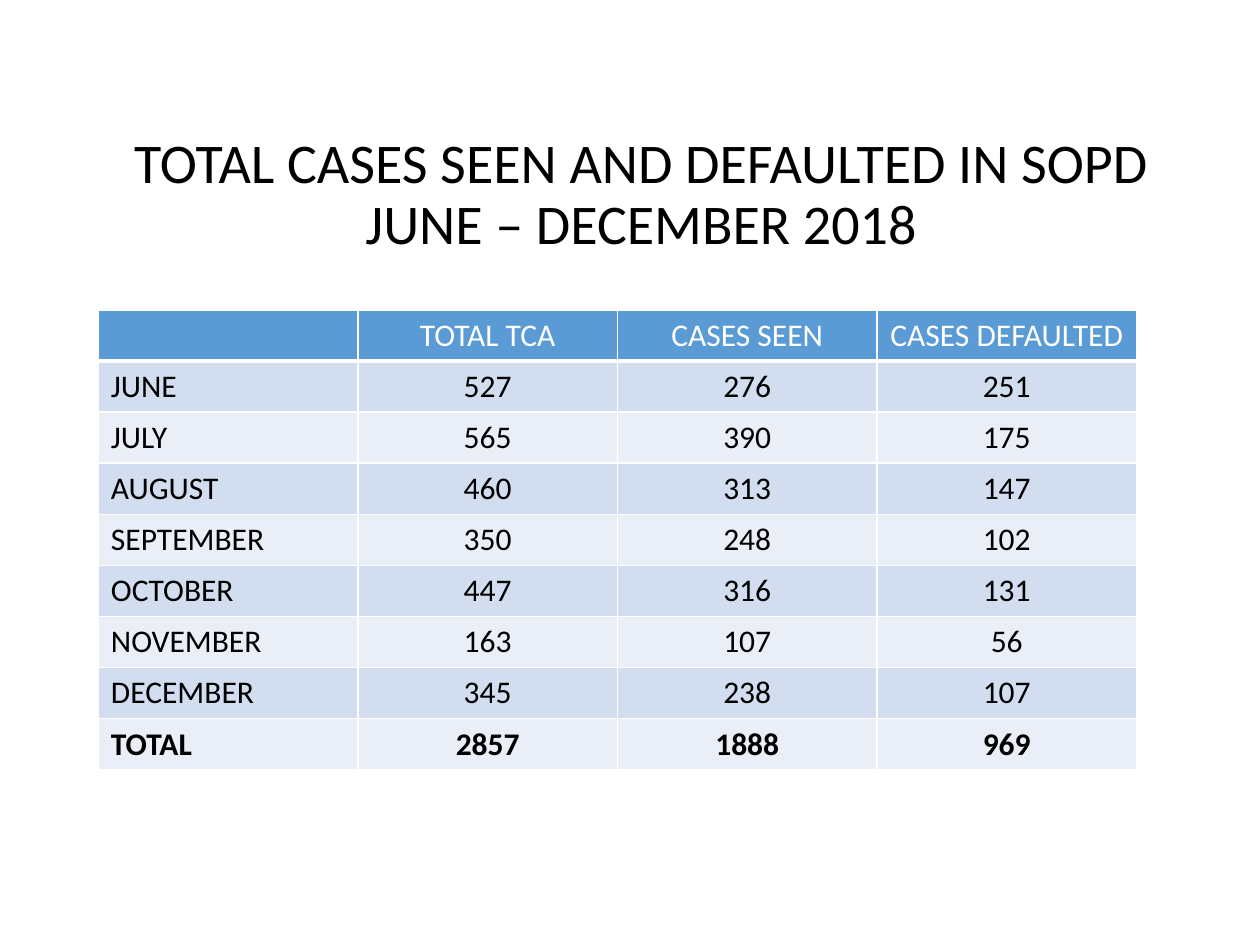
from dataclasses import dataclass

from lxml import etree
from pptx import Presentation
from pptx.dml.color import RGBColor
from pptx.enum.text import MSO_ANCHOR, PP_ALIGN
from pptx.oxml.ns import qn
from pptx.util import Pt

CENTER, LEFT = PP_ALIGN.CENTER, PP_ALIGN.LEFT
MIDDLE = MSO_ANCHOR.MIDDLE
TITLE_ONLY = 5


@dataclass(frozen=True)
class Theme:
    font: str = "Calibri"
    title_size: float = 32
    table_size: float = 18
    text: str = "000000"
    header_text: str = "FFFFFF"
    header_fill: str = "5B9BD5"
    band_fills: tuple[str, str] = ("D2DEEF", "EAEFF7")
    border: str = "FFFFFF"
    thin_border: float = 1
    header_border: float = 3


@dataclass(frozen=True)
class Box:
    left: float
    top: float
    width: float
    height: float


@dataclass(frozen=True)
class CaseRow:
    label: str
    total: int
    seen: int
    defaulted: int
    bold: bool = False

    def texts(self) -> list[str]:
        return [self.label, str(self.total), str(self.seen), str(self.defaulted)]


THEME = Theme()
TITLE = "TOTAL CASES SEEN AND DEFAULTED IN SOPD JUNE – DECEMBER 2018"
TITLE_BOX = Box(56.2, 59.8, 620.6, 104.4)
TABLE_BOX = Box(56.2, 177.1, 593.28, 262.8)
HEADERS = ["", "TOTAL TCA", "CASES SEEN", "CASES DEFAULTED"]
CASE_ROWS = [
    CaseRow("JUNE", 527, 276, 251),
    CaseRow("JULY", 565, 390, 175),
    CaseRow("AUGUST", 460, 313, 147),
    CaseRow("SEPTEMBER", 350, 248, 102),
    CaseRow("OCTOBER", 447, 316, 131),
    CaseRow("NOVEMBER", 163, 107, 56),
    CaseRow("DECEMBER", 345, 238, 107),
    CaseRow("TOTAL", 2857, 1888, 969, bold=True),
]


def format_paragraph(paragraph, size: float, color: str, alignment, bold: bool = False) -> None:
    paragraph.alignment = alignment
    for run in paragraph.runs:
        run.font.name = THEME.font
        run.font.size = Pt(size)
        run.font.bold = bold
        run.font.color.rgb = RGBColor.from_string(color)


def set_borders(cell, top: float, bottom: float) -> None:
    """Draw the four cell borders; they must precede the fill in the XML."""
    properties = cell._tc.get_or_add_tcPr()
    thin = THEME.thin_border
    for side, width in (("lnL", thin), ("lnR", thin), ("lnT", top), ("lnB", bottom)):
        line = etree.SubElement(properties, qn(f"a:{side}"), w=str(int(Pt(width))))
        fill = etree.SubElement(line, qn("a:solidFill"))
        etree.SubElement(fill, qn("a:srgbClr"), val=THEME.border)


def fill_row(table, row: int, texts: list[str], fill: str, color: str, bold: bool = False) -> None:
    top = THEME.header_border if row == 1 else THEME.thin_border
    bottom = THEME.header_border if row == 0 else THEME.thin_border
    for column, text in enumerate(texts):
        cell = table.cell(row, column)
        set_borders(cell, top, bottom)
        cell.fill.solid()
        cell.fill.fore_color.rgb = RGBColor.from_string(fill)
        cell.text_frame.text = text
        alignment = CENTER if column else LEFT
        format_paragraph(cell.text_frame.paragraphs[0], THEME.table_size, color, alignment, bold)


def add_title(slide) -> None:
    title = slide.shapes.title
    title.left, title.top = Pt(TITLE_BOX.left), Pt(TITLE_BOX.top)
    title.width, title.height = Pt(TITLE_BOX.width), Pt(TITLE_BOX.height)
    title.text_frame.text = TITLE
    title.text_frame.word_wrap = True
    title.text_frame.vertical_anchor = MIDDLE
    paragraph = title.text_frame.paragraphs[0]
    paragraph.line_spacing = 0.9
    format_paragraph(paragraph, THEME.title_size, THEME.text, CENTER)


def add_case_table(slide) -> None:
    box = TABLE_BOX
    table = slide.shapes.add_table(
        len(CASE_ROWS) + 1, len(HEADERS),
        Pt(box.left), Pt(box.top), Pt(box.width), Pt(box.height),
    ).table
    table.first_row = False
    table.horz_banding = False
    for column in table.columns:
        column.width = Pt(box.width / len(HEADERS))
    for row in table.rows:
        row.height = Pt(box.height / (len(CASE_ROWS) + 1))

    fill_row(table, 0, HEADERS, THEME.header_fill, THEME.header_text)
    for index, case_row in enumerate(CASE_ROWS):
        fill = THEME.band_fills[index % 2]
        fill_row(table, index + 1, case_row.texts(), fill, THEME.text, case_row.bold)


def main() -> None:
    presentation = Presentation()
    presentation.slide_width, presentation.slide_height = Pt(720), Pt(540)
    slide = presentation.slides.add_slide(presentation.slide_layouts[TITLE_ONLY])
    add_title(slide)
    add_case_table(slide)
    presentation.save("out.pptx")


if __name__ == "__main__":
    main()
